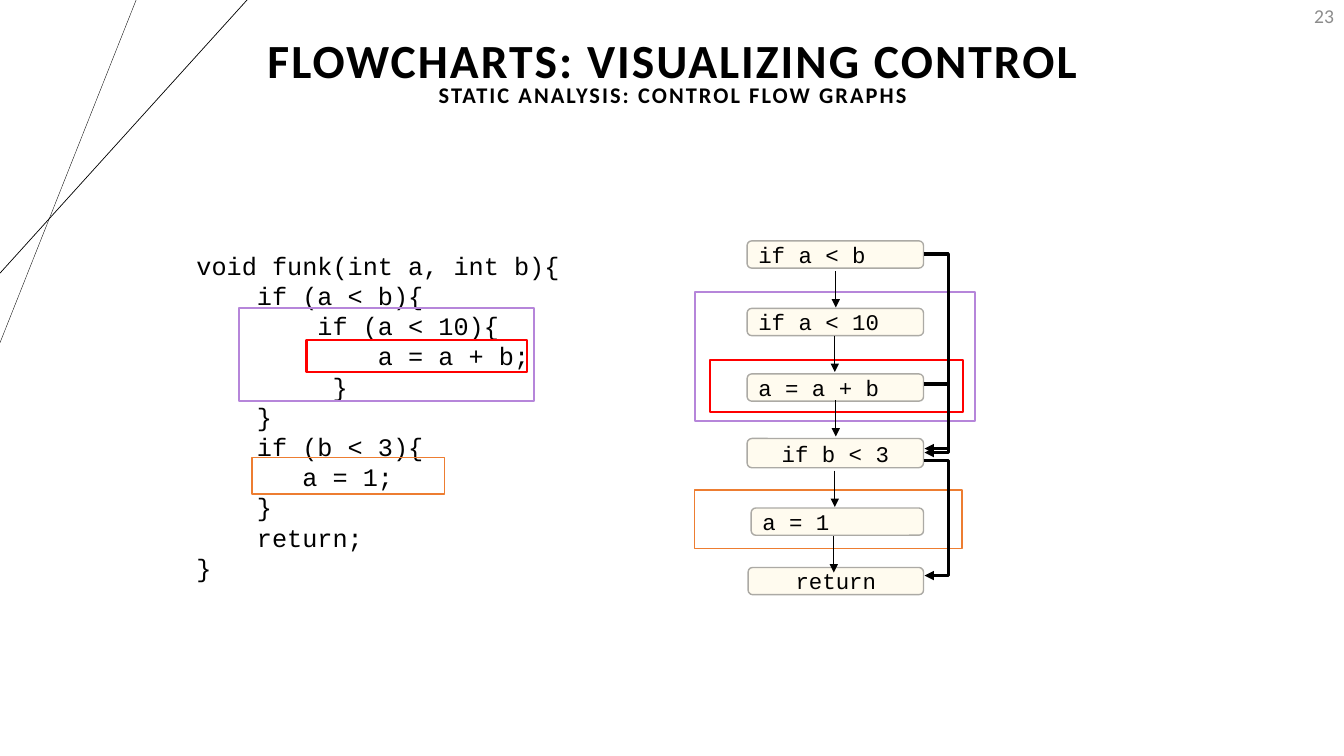
import lxml.etree
import pptx
import pptx.util
import pptx.dml.color
import pptx.enum.shapes
import pptx.enum.text
import pptx.oxml.ns
from dataclasses import dataclass

Inches = pptx.util.Inches
Pt = pptx.util.Pt
Align = pptx.enum.text.PP_ALIGN
Anchor = pptx.enum.text.MSO_ANCHOR
Preset = pptx.enum.shapes.MSO_SHAPE
Connector = pptx.enum.shapes.MSO_CONNECTOR


@dataclass(frozen=True)
class Theme:
    ink: str = "000000"
    muted: str = "8C8C8C"
    node_fill: str = "FFF2CC"
    node_opacity: int = 30
    node_line: str = "ACAAA5"
    outer_block: str = "B686DA"
    inner_block: str = "FF0000"
    last_block: str = "ED7D31"
    heading_font: str = "Calibri"
    code_font: str = "Courier New"
    title_size: float = 34
    subtitle_size: float = 16
    number_size: float = 14
    code_size: float = 18
    node_size: float = 16
    code_leading: float = 21.6
    code_column: float = 0.15


def color(value):
    return pptx.dml.color.RGBColor.from_string(value)


def add_xml(parent, tag, **attributes):
    return lxml.etree.SubElement(parent, pptx.oxml.ns.qn(tag), attributes)


class FlowchartPage:
    def __init__(self, deck, theme):
        self.theme = theme
        self.page = deck.slides.add_slide(deck.slide_layouts[5])

    def format_text(self, box, font, size, ink=None, align=Align.LEFT, bold=False):
        box.text_frame.word_wrap = True
        for para in box.text_frame.paragraphs:
            para.alignment = align
            for span in para.runs:
                span.font.name = font
                span.font.size = Pt(size)
                span.font.bold = bold
                span.font.color.rgb = color(ink or self.theme.ink)

    def text_box(self, left, top, width, height):
        return self.page.shapes.add_textbox(
            Inches(left), Inches(top), Inches(width), Inches(height))

    def heading(self, box, text, top, size):
        box.left, box.top = Inches(0.02), Inches(top)
        box.width, box.height = Inches(13.31), Inches(1.45)
        box.text_frame.text = text
        box.text_frame.auto_size = pptx.enum.text.MSO_AUTO_SIZE.NONE
        box.text_frame.vertical_anchor = Anchor.MIDDLE
        self.format_text(box, self.theme.heading_font, size, align=Align.CENTER, bold=True)
        para = box.text_frame.paragraphs[0]
        para.line_spacing = 0.9
        para.runs[0].font._element.set("spc", "150")

    def title(self, text):
        self.heading(self.page.shapes.title, text, -0.1, self.theme.title_size)

    def subtitle(self, text):
        self.heading(self.text_box(0, 0, 1, 1), text, 0.23, self.theme.subtitle_size)

    def page_number(self, text):
        box = self.text_box(10.33, -0.04, 3, 0.4)
        box.text_frame.text = text
        box.text_frame.vertical_anchor = Anchor.MIDDLE
        self.format_text(box, self.theme.heading_font, self.theme.number_size,
                         self.theme.muted, Align.RIGHT)

    def code(self, lines, left, top, width, height):
        box = self.text_box(left, top, width, height)
        box.text_frame.text = "\n".join(text for _, text in lines)
        self.format_text(box, self.theme.code_font, self.theme.code_size)
        for para, (columns, _) in zip(box.text_frame.paragraphs, lines):
            para.line_spacing = Pt(self.theme.code_leading)
            properties = para._p.get_or_add_pPr()
            properties.set("marL", str(Inches(columns * self.theme.code_column)))
            properties.set("indent", "0")

    def outline(self, preset, left, top, width, height, ink, weight):
        shape = self.page.shapes.add_shape(
            preset, Inches(left), Inches(top), Inches(width), Inches(height))
        shape.shadow.inherit = False
        shape.fill.background()
        shape.line.color.rgb = color(ink)
        shape.line.width = Pt(weight)
        return shape

    def node(self, text, left, top, height, align):
        node = self.outline(Preset.ROUNDED_RECTANGLE, left, top, 9.16 - left, height,
                            self.theme.node_line, 1)
        node.fill.solid()
        node.fill.fore_color.rgb = color(self.theme.node_fill)
        tint = node._element.spPr.find(".//" + pptx.oxml.ns.qn("a:srgbClr"))
        add_xml(tint, "a:alpha", val=str(self.theme.node_opacity * 1000))
        node.text_frame.text = text
        node.text_frame.vertical_anchor = Anchor.MIDDLE
        self.format_text(node, self.theme.code_font, self.theme.node_size, align=align)

    def line(self, start, end, weight, arrow=False, kind=Connector.STRAIGHT):
        line = self.page.shapes.add_connector(
            kind, *(Inches(value) for value in (*start, *end)))
        line.line.color.rgb = color(self.theme.ink)
        line.line.width = Pt(weight)
        properties = line._element.spPr
        if arrow:
            add_xml(properties.find(pptx.oxml.ns.qn("a:ln")), "a:tailEnd", type="triangle")
        add_xml(properties, "a:effectLst")
        return line

    def branch(self, top, bottom):
        """Arrow that leaves a node on the right and re-enters lower down."""
        side, span, reach = 9.16, 0.01, 0.25
        line = self.line((side, top), (side + span, bottom), 2.25, True, Connector.ELBOW)
        guides = line._element.spPr.find(".//" + pptx.oxml.ns.qn("a:avLst"))
        add_xml(guides, "a:gd", name="adj1", fmla=f"val {round(reach / span * 100000)}")


def main():
    deck = pptx.Presentation()
    deck.slide_width, deck.slide_height = Inches(13.33), Inches(7.5)
    theme = Theme()
    chart = FlowchartPage(deck, theme)

    # Corner lines and headings
    chart.line((1.35, 0), (0, 3.4), 0.25)
    chart.line((2.45, 0), (0, 2.71), 0.5)
    chart.page_number("23")
    chart.title("FLOWCHARTS: VISUALIZING CONTROL")
    chart.subtitle("STATIC ANALYSIS: CONTROL FLOW GRAPHS")

    # Flowchart nodes
    for text, left, top, height, align in (
            ("if a < b", 7.41, 2.39, 0.27, Align.LEFT),
            ("if a < 10", 7.41, 3.06, 0.27, Align.LEFT),
            ("a = a + b", 7.41, 3.71, 0.27, Align.LEFT),
            ("if b < 3", 7.41, 4.35, 0.29, Align.CENTER),
            ("a = 1", 7.45, 5.04, 0.27, Align.LEFT),
            ("return", 7.42, 5.63, 0.27, Align.CENTER)):
        chart.node(text, left, top, height, align)

    # Source code: indent in columns, text
    chart.code((
        (0, "void funk(int a, int b){"),
        (4, "if (a < b){"),
        (8, "if (a < 10){"),
        (12, "a = a + b;"),
        (9, "}"),
        (4, "}"),
        (4, "if (b < 3){"),
        (7, "a = 1;"),
        (4, "}"),
        (4, "return;"),
        (0, "}")), 1.85, 2.43, 4, 3.43)

    # Matching frames around code and flowchart
    for ink, weight, frames in (
            (theme.last_block, 1, ((6.89, 4.86, 2.65, 0.58), (2.5, 4.54, 1.91, 0.36))),
            (theme.outer_block, 1.5, ((2.37, 3.06, 2.93, 0.92), (6.89, 2.9, 2.78, 1.28))),
            (theme.inner_block, 1.5, ((3.04, 3.37, 2.19, 0.32), (7.04, 3.57, 2.51, 0.52)))):
        for frame in frames:
            chart.outline(Preset.RECTANGLE, *frame, ink, weight)

    # Steps down the chart and branches past it
    for x, top in ((8.29, 2.69), (8.28, 3.33), (8.29, 3.97), (8.28, 4.67), (8.27, 5.32)):
        chart.line((x, top), (x, top + 0.36), 0.5, True)
    for top, bottom in ((2.52, 4.49), (3.81, 4.45), (4.57, 5.71)):
        chart.branch(top, bottom)

    deck.save("out.pptx")


if __name__ == "__main__":
    main()
